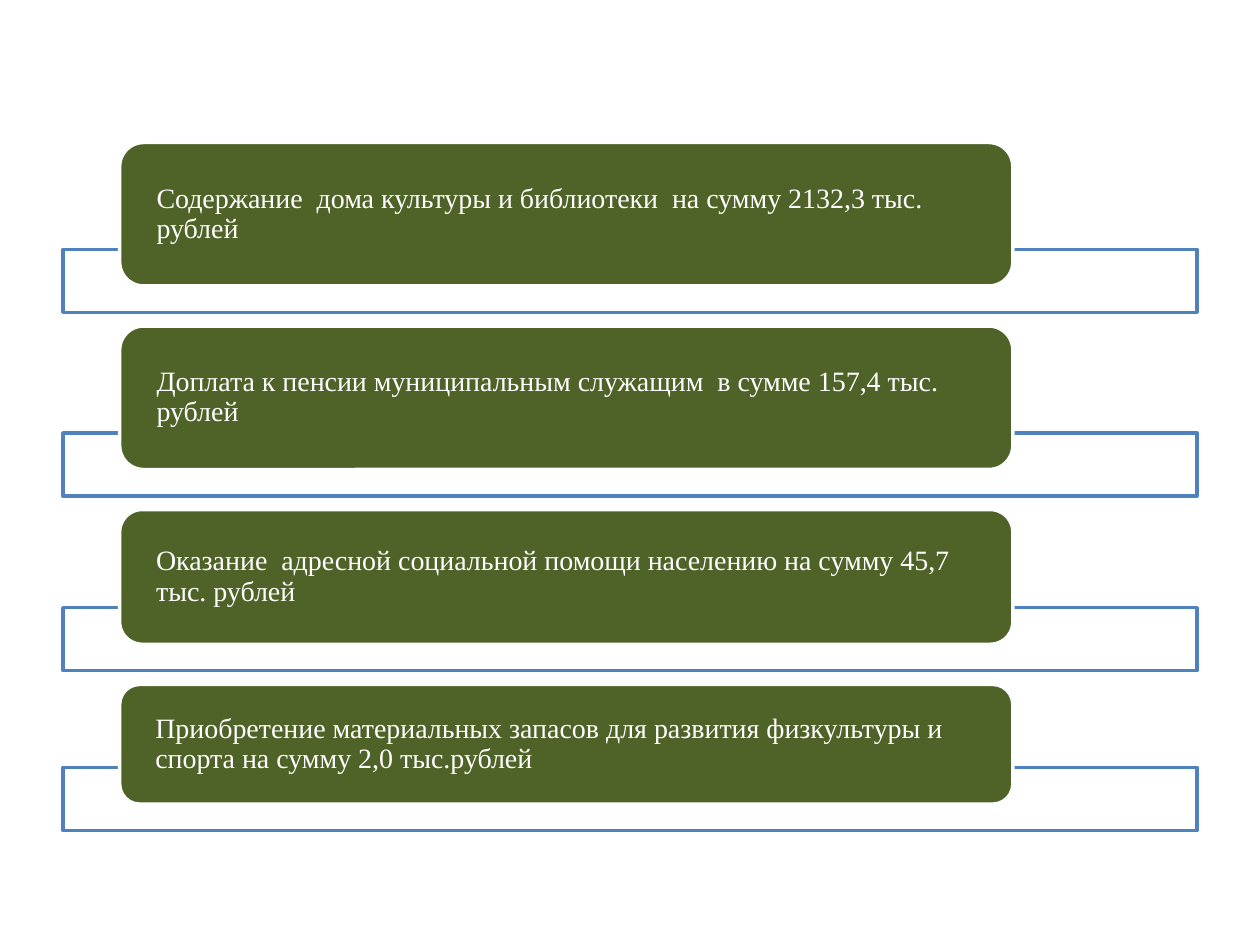
from lxml.etree import SubElement
from pptx import Presentation
from pptx.dml.color import RGBColor as Rgb
from pptx.enum.shapes import MSO_SHAPE as Kind
from pptx.enum.text import MSO_ANCHOR as Anchor, PP_ALIGN as Align
from pptx.oxml.ns import qn
from pptx.util import Pt

HUES = {"white": "FFFFFF", "blue": "4F81BD", "green": "4F6228"}
ROWS = [
    (82, "Содержание  дома культуры и библиотеки  на сумму 2132,3 тыс. рублей"),
    (82, "Доплата к пенсии муниципальным служащим  в сумме 157,4 тыс. рублей"),
    (77, "Оказание  адресной социальной помощи населению на сумму 45,7 тыс. рублей"),
    (68.4, "Приобретение материальных запасов для развития физкультуры и спорта на сумму 2,0 тыс.рублей"),
]
GAP = 22.9
LAP = 20.9

deck = Presentation()
deck.slide_width, deck.slide_height = Pt(720), Pt(540)
slide = deck.slides.add_slide(deck.slide_layouts[6])


def add_box(kind, left, top, width, height, fill, line):
    box = slide.shapes.add_shape(kind, Pt(left), Pt(top), Pt(width), Pt(height))
    box.shadow.inherit = False
    box.fill.solid()
    box.fill.fore_color.rgb = Rgb.from_string(HUES[fill])
    box.line.color.rgb = Rgb.from_string(HUES[line])
    box.line.width = Pt(2)
    return box


top = 81.4
for high, text in ROWS:
    frame = add_box(Kind.RECTANGLE, 36, top + high - LAP, 648, 36, "white", "blue")
    tint = frame.fill._xPr.find(qn("a:solidFill"))[0]
    SubElement(tint, qn("a:alpha"), val="90000")

    card = add_box(Kind.ROUNDED_RECTANGLE, 68.4, top, 510.4, high, "green", "white")
    body = card.text_frame
    body.word_wrap = True
    body.vertical_anchor = Anchor.MIDDLE
    body.margin_left = body.margin_right = Pt(17.1)
    body.margin_top = body.margin_bottom = 0
    body.text = text
    para = body.paragraphs[0]
    para.alignment = Align.LEFT
    para.line_spacing = 0.9
    font = para.runs[0].font
    font.name = "Times New Roman"
    font.size = Pt(16)
    font.color.rgb = Rgb.from_string(HUES["white"])
    top += high + GAP

deck.save("out.pptx")
